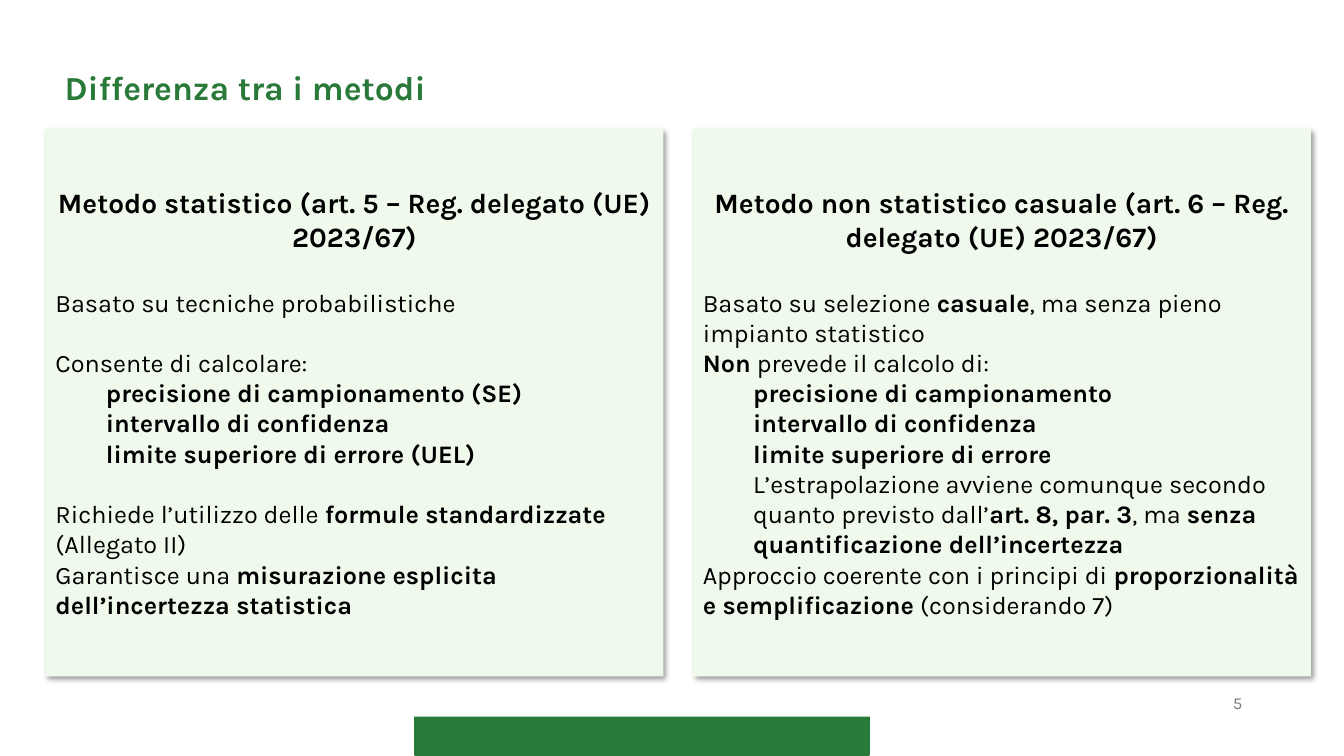
"""Build a slide that compares two sampling methods in two cards."""
from dataclasses import dataclass

from lxml.etree import SubElement
from pptx import Presentation
from pptx.dml.color import RGBColor
from pptx.enum.shapes import MSO_SHAPE
from pptx.enum.text import MSO_ANCHOR, MSO_AUTO_SIZE, PP_ALIGN
from pptx.oxml import parse_xml
from pptx.oxml.ns import nsdecls, qn
from pptx.util import Inches, Pt


@dataclass(frozen=True)
class Theme:
    font: str = "Karla"
    green: str = "297A38"
    card: str = "F0FAEC"
    white: str = "FFFFFF"
    black: str = "000000"
    grey: str = "797979"
    title_size: int = 24
    heading_size: int = 20
    body_size: int = 18
    number_size: int = 12
    heading_gap: float = 24
    body_gap: float = 21.6


theme = Theme()
presentation = Presentation()
presentation.slide_width = Inches(13.33)
presentation.slide_height = Inches(7.5)
column = presentation.slide_width / 100
row = presentation.slide_height / 100


def grid(left, top, width, height):
    """Turn percent columns and rows into slide lengths."""
    return round(left * column), round(top * row), round(width * column), round(height * row)


def write(paragraph, text, size=theme.body_size, color=theme.black, bold=False,
          align=PP_ALIGN.LEFT, before=0, level=0):
    """Write text in a paragraph; double asterisks switch bold on and off."""
    paragraph.alignment = align
    paragraph.level = level
    paragraph.line_spacing = 1.0
    paragraph.space_before = Pt(before)
    paragraph.space_after = Pt(0)
    properties = paragraph._p.get_or_add_pPr()
    properties.set("marL", str(Inches(0.5) * level))
    properties.set("indent", "0")
    SubElement(properties, qn("a:buNone"))
    for index, part in enumerate(text.split("**")):
        if part:
            run = paragraph.add_run()
            run.text = part
            run.font.name = theme.font
            run.font.size = Pt(size)
            run.font.bold = bold or index % 2 == 1
            run.font.color.rgb = RGBColor.from_string(color)


slide = presentation.slides.add_slide(presentation.slide_layouts.get_by_name("Two Content"))
title, *cards = slide.placeholders

panels = [
    ((30.9, 94.53, 33.75, 5.33), theme.green, theme.green),
    ((1.95, 3.47, 96.32, 91.33), theme.white, None),
]
for order, (area, fill, line) in enumerate(panels):
    panel = slide.shapes.add_shape(MSO_SHAPE.RECTANGLE, *grid(*area))
    panel.shadow.inherit = False
    panel.fill.solid()
    panel.fill.fore_color.rgb = RGBColor.from_string(fill)
    if line:
        panel.line.color.rgb = RGBColor.from_string(line)
        panel.line.width = Pt(1.5)
    else:
        panel.line.fill.background()
    slide.shapes._spTree.insert(2 + order, panel._element)

title.left, title.top, title.width, title.height = grid(4.05, 8.13, 90.7, 6.67)
title.text_frame.auto_size = MSO_AUTO_SIZE.NONE
title.text_frame.vertical_anchor = MSO_ANCHOR.TOP
write(title.text_frame.paragraphs[0], "Differenza tra i metodi",
      size=theme.title_size, color=theme.green, bold=True)

number = slide.shapes.add_textbox(*grid(70.67, 90.8, 22.5, 4.27))
number.text_frame.word_wrap = True
number.text_frame.vertical_anchor = MSO_ANCHOR.MIDDLE
write(number.text_frame.paragraphs[0], "5", size=theme.number_size,
      color=theme.grey, align=PP_ALIGN.RIGHT)

heading = {"size": theme.heading_size, "bold": True, "align": PP_ALIGN.CENTER}
after_heading = {"before": theme.heading_gap}
after_gap = {"before": theme.body_gap}
plain = {}
nested = {"level": 1}
methods = [
    [
        ("Metodo statistico (art. 5 – Reg. delegato (UE) 2023/67)", heading),
        ("Basato su tecniche probabilistiche", after_heading),
        ("Consente di calcolare:", after_gap),
        ("**precisione di campionamento (SE)**", nested),
        ("**intervallo di confidenza**", nested),
        ("**limite superiore di errore (UEL)**", nested),
        ("Richiede l’utilizzo delle **formule standardizzate** (Allegato II)", after_gap),
        ("Garantisce una **misurazione esplicita dell’incertezza statistica**", plain),
    ],
    [
        ("Metodo non statistico casuale (art. 6 – Reg. delegato (UE) 2023/67)", heading),
        ("Basato su selezione **casuale**, ma senza pieno impianto statistico", after_heading),
        ("**Non** prevede il calcolo di:", plain),
        ("**precisione di campionamento**", nested),
        ("**intervallo di confidenza**", nested),
        ("**limite superiore di errore**", nested),
        ("L’estrapolazione avviene comunque secondo quanto previsto dall’"
         "**art. 8, par. 3**, ma **senza quantificazione dell’incertezza**", nested),
        ("Approccio coerente con i principi di **proporzionalità e semplificazione**"
         " (considerando 7)", plain),
    ],
]
for position, (card, lines) in enumerate(zip(cards, methods)):
    card.left, card.top, card.width, card.height = grid(3.38 + 48.16 * position, 17.07, 45.99, 72.4)
    card.fill.solid()
    card.fill.fore_color.rgb = RGBColor.from_string(theme.card)
    card.line.fill.background()
    card._element.spPr.append(parse_xml(
        f'<a:effectLst {nsdecls("a")}><a:outerShdw blurRad="{Pt(4)}" dist="{Pt(3)}" '
        f'dir="2700000" algn="tl" rotWithShape="0"><a:srgbClr val="{theme.black}">'
        '<a:alpha val="40000"/></a:srgbClr></a:outerShdw></a:effectLst>'))
    frame = card.text_frame
    frame.auto_size = MSO_AUTO_SIZE.NONE
    frame.vertical_anchor = MSO_ANCHOR.MIDDLE
    for index, (text, style) in enumerate(lines):
        paragraph = frame.add_paragraph() if index else frame.paragraphs[0]
        write(paragraph, text, **style)

presentation.save("out.pptx")
